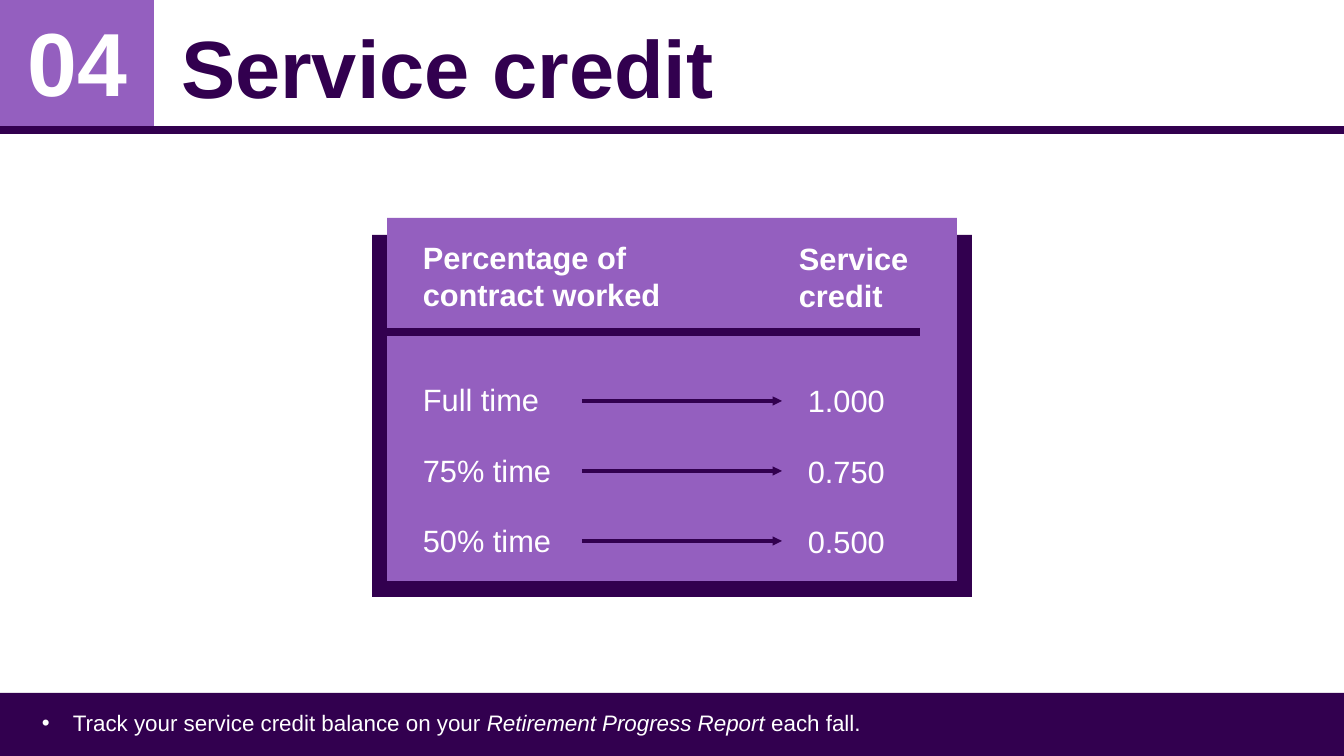
from lxml import etree
from pptx import Presentation
from pptx.dml.color import RGBColor
from pptx.enum.shapes import MSO_CONNECTOR as Connector, MSO_SHAPE as Shape
from pptx.enum.text import MSO_ANCHOR as Anchor, MSO_AUTO_SIZE as AutoSize, PP_ALIGN as Align
from pptx.oxml.ns import qn
from pptx.util import Pt

DARK = RGBColor(0x32, 0x00, 0x4F)
PURPLE = RGBColor(0x94, 0x5F, 0xBF)
WHITE = RGBColor(0xFF, 0xFF, 0xFF)
FONT = "Arial"

NUMBER = "04"
TITLE = "Service credit"
HEADINGS = ("Percentage of contract worked", "Service credit")
CREDITS = [("Full time", "1.000"), ("75% time", "0.750"), ("50% time", "0.500")]
NOTE = [
    ("Track your service credit balance on your ", False),
    ("Retirement Progress Report", True),
    (" each fall.", False),
]

WIDTH, HEIGHT = 1344, 756
HEADER_BOTTOM = 130
FOOTER_TOP = 693
ARROW_TOP, ARROW_STEP = 401, 70


def px(length):
    return round(length * 914400 / 100.8)


def add_span(para, text, size, color=WHITE, bold=False, italic=False):
    span = para.add_run()
    span.text = text
    font = span.font
    font.name, font.size, font.bold, font.italic = FONT, Pt(size), bold, italic
    font.color.rgb = color


def add_panel(page, left, top, width, height, color):
    panel = page.shapes.add_shape(Shape.RECTANGLE, px(left), px(top), px(width), px(height))
    panel.shadow.inherit = False
    panel.fill.solid()
    panel.fill.fore_color.rgb = color
    panel.line.fill.background()


def add_frame(page, left, top, width, height):
    box = page.shapes.add_textbox(px(left), px(top), px(width), px(height))
    box.text_frame.word_wrap = True
    return box.text_frame


def add_column(page, left, top, width, height, lines, bold=False):
    frame = add_frame(page, left, top, width, height)
    for index, text in enumerate(lines):
        para = frame.add_paragraph() if index else frame.paragraphs[0]
        para.space_after = Pt(24)
        add_span(para, text, 22, bold=bold)


def add_rule(page, left, right, y, weight, arrow=False):
    rule = page.shapes.add_connector(Connector.STRAIGHT, px(left), px(y), px(right), px(y))
    rule.line.color.rgb = DARK
    rule.line.width = Pt(weight)
    if arrow:
        etree.SubElement(rule.line._get_or_add_ln(), qn("a:tailEnd"), type="triangle")
    etree.SubElement(rule._element.spPr, qn("a:effectLst"))


def add_header(page):
    add_panel(page, 0, 0, 154, HEADER_BOTTOM, PURPLE)
    frame = add_frame(page, 17, 19, 121, 97)
    frame.vertical_anchor = Anchor.MIDDLE
    para = frame.paragraphs[0]
    para.alignment = Align.CENTER
    para.line_spacing = 0.9
    add_span(para, NUMBER, 64, bold=True)
    add_rule(page, 0, WIDTH, HEADER_BOTTOM, 6)

    title = page.shapes.title
    title.left, title.top, title.width, title.height = px(171), px(1), px(1155), px(130)
    title.text_frame.auto_size = AutoSize.NONE
    title.text_frame.vertical_anchor = Anchor.MIDDLE
    para = title.text_frame.paragraphs[0]
    para.alignment = Align.LEFT
    add_span(para, TITLE, 58, DARK, bold=True)


def add_credit_card(page):
    add_panel(page, 372, 235, 600, 362, DARK)
    add_panel(page, 387, 218, 570, 363, PURPLE)
    add_column(page, 413, 234, 262, 85, HEADINGS[:1], bold=True)
    add_column(page, 789, 235, 153, 85, HEADINGS[1:], bold=True)
    add_rule(page, 381, 920, 332, 6)
    times, values = zip(*CREDITS)
    add_column(page, 413, 376, 161, 190, times)
    add_column(page, 798, 377, 131, 190, values)
    for row in range(len(CREDITS)):
        add_rule(page, 582, 782, ARROW_TOP + row * ARROW_STEP, 2.25, arrow=True)


def add_footer(page):
    add_panel(page, 0, FOOTER_TOP, WIDTH, HEIGHT - FOOTER_TOP, DARK)
    para = add_frame(page, 32, 704, 967, 37).paragraphs[0]
    indent = px(31)
    props = para._p.get_or_add_pPr()
    props.set("marL", str(indent))
    props.set("indent", str(-indent))
    etree.SubElement(props, qn("a:buFont"), typeface=FONT)
    etree.SubElement(props, qn("a:buChar"), char="•")
    for text, italic in NOTE:
        add_span(para, text, 16, italic=italic)


def main():
    deck = Presentation()
    deck.slide_width, deck.slide_height = px(WIDTH), px(HEIGHT)
    page = deck.slides.add_slide(deck.slide_layouts[5])
    add_header(page)
    add_credit_card(page)
    add_footer(page)
    deck.save("out.pptx")


if __name__ == "__main__":
    main()
